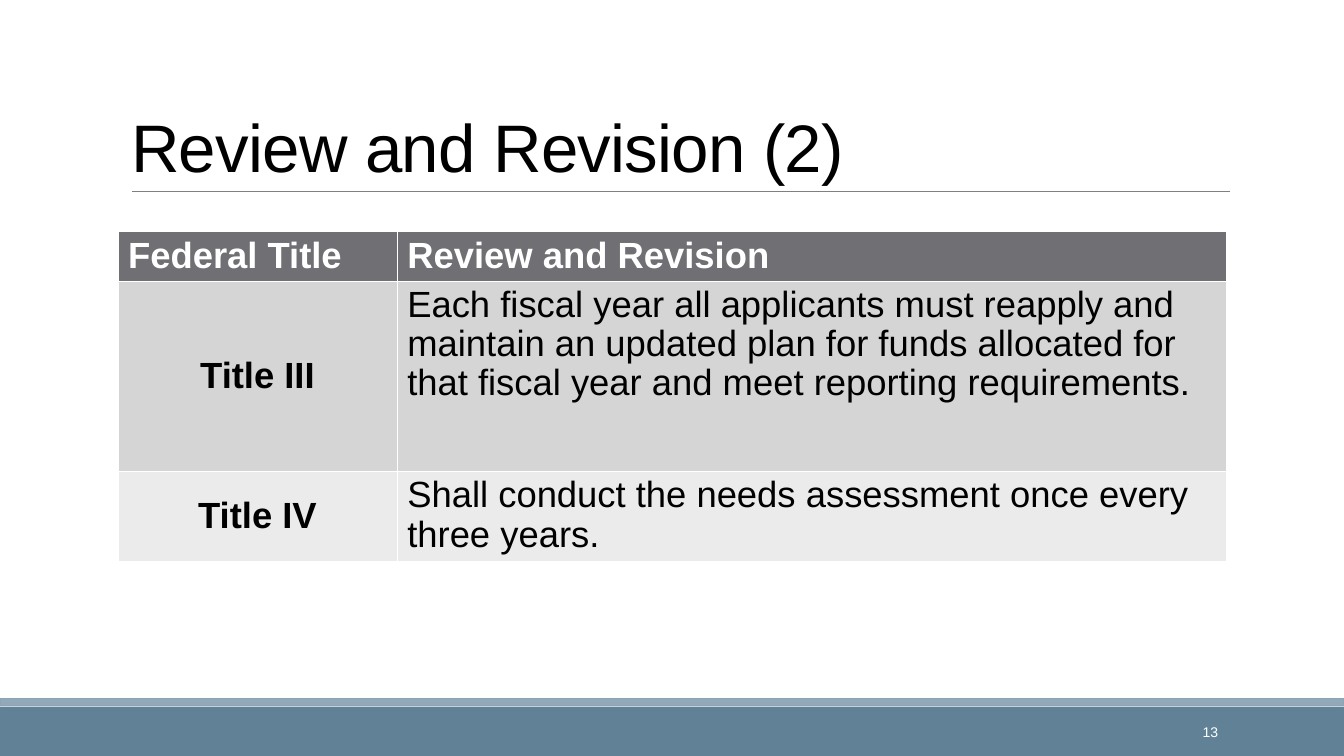
from pptx import Presentation
from pptx.dml.color import RGBColor
from pptx.enum.shapes import MSO_CONNECTOR, MSO_SHAPE
from pptx.enum.text import MSO_ANCHOR, PP_ALIGN
from pptx.oxml.ns import qn
from pptx.util import Inches, Pt

TITLE = "Review and Revision (2)"
ROWS = [
    ("Federal Title", "Review and Revision"),
    ("Title III", "Each fiscal year all applicants must reapply and maintain an updated plan "
                  "for funds allocated for that fiscal year and meet reporting requirements."),
    ("Title IV", "Shall conduct the needs assessment once every three years."),
]
PAGE = "13"

BLACK = RGBColor(0x00, 0x00, 0x00)
WHITE = RGBColor(0xFF, 0xFF, 0xFF)
RULE = RGBColor(0x80, 0x80, 0x80)
BAND = RGBColor(0x61, 0x81, 0x97)
STRIP = RGBColor(0x92, 0xA9, 0xB9)
STRIP_LINE = RGBColor(0x8F, 0xA3, 0xB6)
ROW_FILLS = [RGBColor(0x6F, 0x6F, 0x74), RGBColor(0xD5, 0xD5, 0xD6), RGBColor(0xEB, 0xEB, 0xEB)]
COL_WIDTHS = [2.77, 8.23]
ROW_HEIGHTS = [0.49, 1.89, 0.89]


def write(tf, text, size, color=BLACK, bold=False, align=PP_ALIGN.LEFT,
          anchor=MSO_ANCHOR.TOP, spacing=None, after=0):
    """Put one formatted paragraph into a text frame and return its run."""
    tf.word_wrap = True
    tf.vertical_anchor = anchor
    p = tf.paragraphs[0]
    p.alignment, p.line_spacing, p.space_after = align, spacing, Pt(after)
    r = p.add_run()
    r.text = text
    r.font.name, r.font.size, r.font.bold = "Arial", Pt(size), bold
    r.font.color.rgb = color
    return r


def add_bar(s, top, height, fill, line=None):
    """Add a bar across the full slide width."""
    sp = s.shapes.add_shape(MSO_SHAPE.RECTANGLE, 0, Inches(top), Inches(13.33), Inches(height))
    sp.shadow.inherit = False
    sp.fill.solid()
    sp.fill.fore_color.rgb = fill
    if line is None:
        sp.line.fill.background()
    else:
        sp.line.color.rgb = line
        sp.line.width = Pt(1.25)


def add_rule(s):
    """Add the thin line under the title."""
    rule = s.shapes.add_connector(MSO_CONNECTOR.STRAIGHT, Inches(1.31), Inches(1.9),
                                  Inches(12.2), Inches(1.9))
    rule.line.color.rgb = RULE
    rule.line.width = Pt(0.5)
    sp_pr = rule._element.spPr
    sp_pr.append(sp_pr.makeelement(qn("a:effectLst"), {}))


def add_title(s):
    """Place and fill the title placeholder."""
    title = s.shapes.title
    title.left, title.top, title.width, title.height = map(Inches, (1.2, 0.31, 11, 1.59))
    r = write(title.text_frame, TITLE, 48, anchor=MSO_ANCHOR.BOTTOM, spacing=0.85)
    r.font._element.set("spc", "-50")


def add_review_table(s):
    """Add the table of review rules."""
    table = s.shapes.add_table(len(ROWS), len(COL_WIDTHS), Inches(1.17), Inches(2.3),
                               Inches(sum(COL_WIDTHS)), Inches(sum(ROW_HEIGHTS))).table
    for col, width in zip(table.columns, COL_WIDTHS):
        col.width = Inches(width)
    for i, (texts, height, fill) in enumerate(zip(ROWS, ROW_HEIGHTS, ROW_FILLS)):
        table.rows[i].height = Inches(height)
        for j, text in enumerate(texts):
            cell = table.cell(i, j)
            cell.fill.solid()
            cell.fill.fore_color.rgb = fill
            header, label = i == 0, i > 0 and j == 0
            write(cell.text_frame, text, 26, color=WHITE if header else BLACK,
                  bold=header or label, align=PP_ALIGN.CENTER if label else PP_ALIGN.LEFT,
                  spacing=0.96, after=12)
            cell.vertical_anchor = MSO_ANCHOR.MIDDLE if label else MSO_ANCHOR.TOP


def main():
    """Build the slide and save it."""
    prs = Presentation()
    prs.slide_width, prs.slide_height = Inches(13.33), Inches(7.5)
    s = prs.slides.add_slide(prs.slide_layouts[5])
    add_bar(s, 7.01, 0.49, BAND)
    add_bar(s, 6.93, 0.07, STRIP, STRIP_LINE)
    add_rule(s)
    add_title(s)
    add_review_table(s)
    number = s.shapes.add_textbox(Inches(10.74), Inches(7.06), Inches(1.44), Inches(0.4))
    write(number.text_frame, PAGE, 10, color=WHITE, align=PP_ALIGN.RIGHT, anchor=MSO_ANCHOR.MIDDLE)
    prs.save("out.pptx")


if __name__ == "__main__":
    main()
